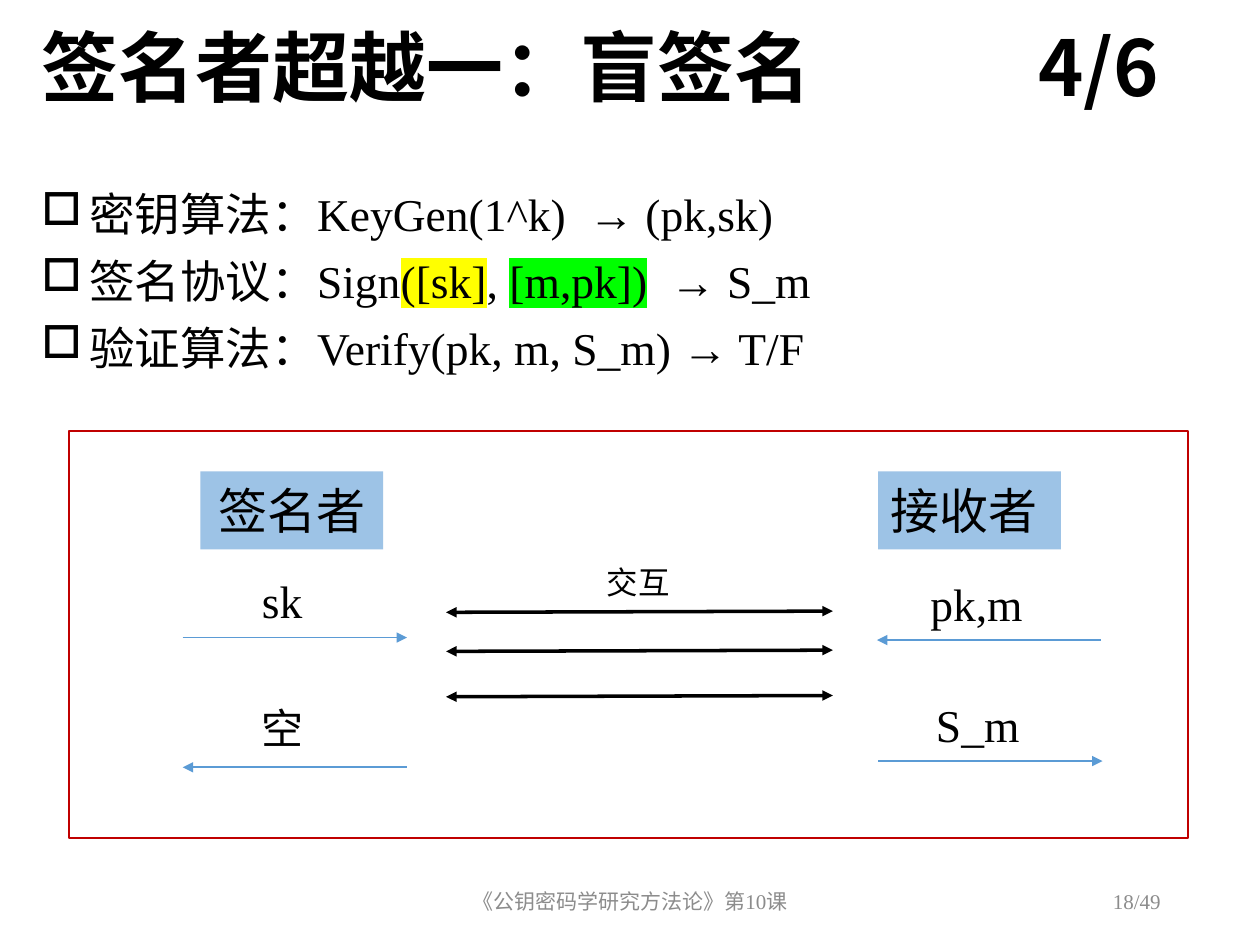
from pptx import Presentation
from pptx.util import Inches, Pt
from pptx.dml.color import RGBColor
from pptx.enum.shapes import MSO_CONNECTOR, MSO_SHAPE
from pptx.enum.text import MSO_ANCHOR, PP_ALIGN
from pptx.oxml.ns import qn
from lxml import etree

LEFT, CENTER, RIGHT = PP_ALIGN.LEFT, PP_ALIGN.CENTER, PP_ALIGN.RIGHT
TOP, MIDDLE = MSO_ANCHOR.TOP, MSO_ANCHOR.MIDDLE
BLACK = RGBColor(0, 0, 0)
GRAY = RGBColor(0x8C, 0x8C, 0x8C)
BLUE = RGBColor(0x5B, 0x9B, 0xD5)
PALE_BLUE = RGBColor(0x9D, 0xC3, 0xE6)
RED = RGBColor(0xC0, 0, 0)
YELLOW, GREEN = "FFFF00", "00FF00"
SERIF, SANS = "Times New Roman", "Noto Sans CJK SC"

# Content
TITLE = "签名者超越一：盲签名\t4/6"
ALGORITHMS = [  # runs of (text, highlight)
    [("密钥算法：KeyGen(1^k)  → (pk,sk)", None)],
    [("签名协议：Sign", None), ("([sk]", YELLOW), (", ", None),
     ("[m,pk])", GREEN), ("  → S_m", None)],
    [("验证算法：Verify(pk, m, S_m) → T/F", None)],
]
PARTIES = [("签名者", 1.59, CENTER), ("接收者", 6.97, LEFT)]
FLOWS = [  # label, size, left, arrow height, points right
    ("sk", 26, 1.45, 5.06, True),
    ("pk,m", 26, 6.96, 5.08, False),
    ("空", 24, 1.45, 6.09, False),
    ("S_m", 26, 6.97, 6.04, True),
]
EXCHANGES = [4.86, 5.17, 5.53]
FOOTERS = [("《公钥密码学研究方法论》第10课", 3.31, 3.38, CENTER),
           ("18/49", 7.06, 2.25, RIGHT)]
MARGIN, CONTENT_W = 0.23, 9.57
FLOW_W, LABEL_W, LABEL_RISE = 1.78, 1.58, 0.56


def box(left, top, width, height):
    return [Inches(v) for v in (left, top, width, height)]


def style(r, size, color=BLACK, font=SERIF, bold=False):
    r.font.size, r.font.name, r.font.bold = Pt(size), font, bold
    r.font.color.rgb = color
    latin = r.font._element.find(qn("a:latin"))
    ea = etree.Element(qn("a:ea"), typeface=SANS)
    latin.addnext(ea)


def highlight(r, color):
    mark = etree.Element(qn("a:highlight"))
    etree.SubElement(mark, qn("a:srgbClr"), val=color)
    r.font._element.find(qn("a:solidFill")).addnext(mark)


def set_text(sp, text, size, align, color=BLACK, anchor=TOP):
    tf = sp.text_frame
    tf.word_wrap, tf.vertical_anchor = True, anchor
    tf.text = text
    p = tf.paragraphs[0]
    p.alignment = align
    style(p.runs[0], size, color)


def add_arrow(x1, y1, x2, y2, color, width, ends):
    line = s.shapes.add_connector(
        MSO_CONNECTOR.STRAIGHT, *[Inches(v) for v in (x1, y1, x2, y2)])
    line.line.color.rgb = color
    line.line.width = Pt(width)
    ln = line.line._get_or_add_ln()
    for end in ends:
        etree.SubElement(ln, qn("a:" + end), type="triangle")
    etree.SubElement(line._element.spPr, qn("a:effectLst"))


def add_rect(*place):
    sp = s.shapes.add_shape(MSO_SHAPE.RECTANGLE, *box(*place))
    sp.shadow.inherit = False
    return sp


prs = Presentation()
prs.slide_width, prs.slide_height = Inches(10), Inches(7.5)
s = prs.slides.add_slide(prs.slide_layouts[5])

# Title, with the page count on a right tab
title = s.shapes.title
title.left, title.top, title.width, title.height = box(MARGIN, 0.19, CONTENT_W, 0.92)
tf = title.text_frame
tf.word_wrap, tf.vertical_anchor = True, TOP
p = tf.paragraphs[0]
p.text = TITLE
p.alignment, p.line_spacing = LEFT, 0.9
tabs = etree.SubElement(p._p.get_or_add_pPr(), qn("a:tabLst"))
etree.SubElement(tabs, qn("a:tab"), pos=str(Inches(8.87)), algn="r")
for r in p.runs:
    style(r, 44, font=SANS, bold=True)

# Algorithm list
tf = s.shapes.add_textbox(*box(MARGIN, 1.48, CONTENT_W, 1.73)).text_frame
tf.word_wrap = True
for i, runs in enumerate(ALGORITHMS):
    p = tf.add_paragraph() if i else tf.paragraphs[0]
    p.line_spacing = 0.9
    if i:
        p.space_before = Pt(10)
    pPr = p._p.get_or_add_pPr()
    pPr.set("marL", str(Inches(0.38)))
    pPr.set("indent", str(-Inches(0.38)))
    etree.SubElement(pPr, qn("a:buChar"), char="□")
    for text, mark in runs:
        r = p.add_run()
        r.text = text
        style(r, 26)
        if mark:
            highlight(r, mark)

# Footer and page number
for text, left, width, align in FOOTERS:
    sp = s.shapes.add_textbox(*box(left, 6.95, width, 0.4))
    set_text(sp, text, 12, align, GRAY, MIDDLE)

# Parties
for name, left, align in PARTIES:
    sp = add_rect(left, 3.74, 1.45, 0.62)
    sp.fill.solid()
    sp.fill.fore_color.rgb = PALE_BLUE
    sp.line.fill.background()
    set_text(sp, name, 28, align, anchor=MIDDLE)

# Interaction between the parties
set_text(s.shapes.add_textbox(*box(3.63, 4.42, 2.87, 0.4)), "交互", 18, CENTER)
for y in EXCHANGES:
    add_arrow(3.54, y, 6.61, y - 0.01, BLACK, 0, ["headEnd", "tailEnd"])

# Inputs and outputs
for label, size, left, y, rightward in FLOWS:
    add_arrow(left, y, left + FLOW_W, y, BLUE, 1,
              ["tailEnd" if rightward else "headEnd"])
    sp = s.shapes.add_textbox(*box(left, y - LABEL_RISE, LABEL_W, 0.54))
    set_text(sp, label, size, CENTER)

# Protocol frame
frame = add_rect(0.55, 3.42, 8.88, 3.23)
frame.fill.background()
frame.line.color.rgb = RED
frame.line.width = Pt(1)

prs.save("out.pptx")
